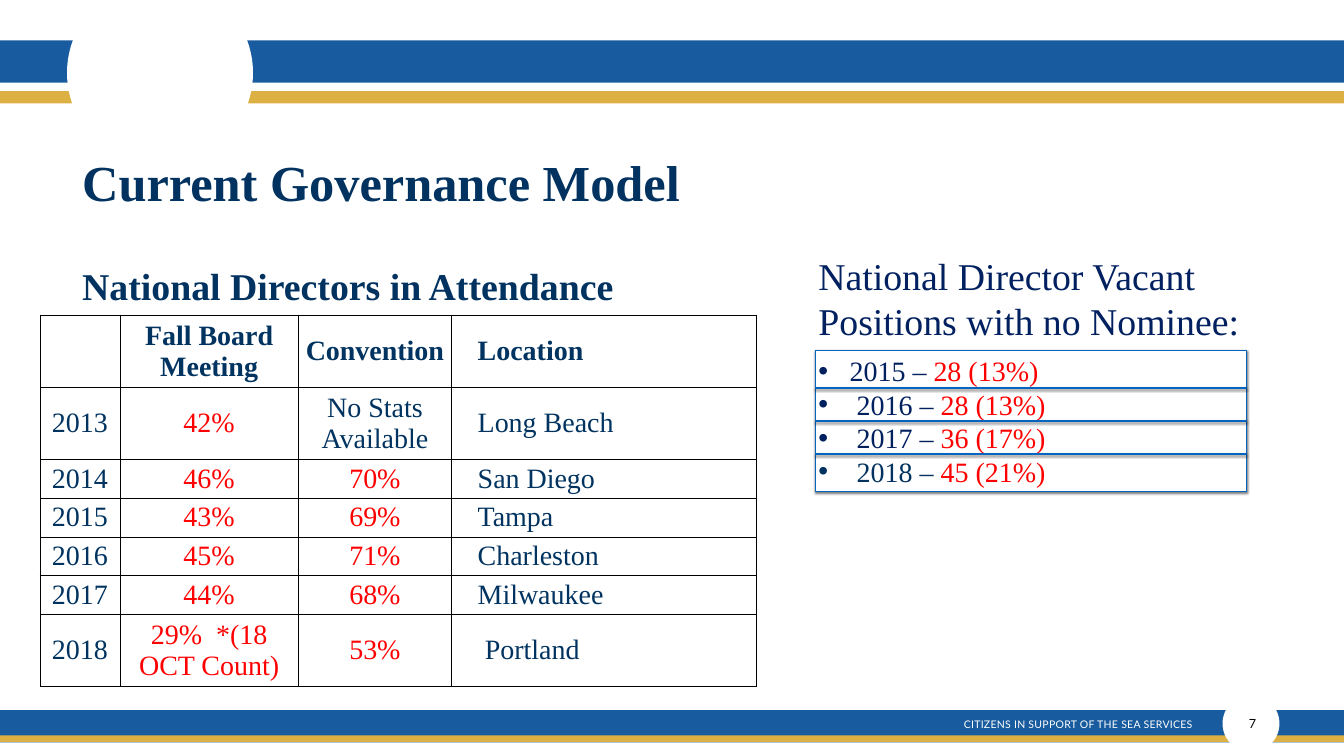
from dataclasses import dataclass

from lxml.etree import SubElement
from pptx import Presentation
from pptx.dml.color import RGBColor as Rgb
from pptx.enum.shapes import MSO_CONNECTOR as Link, MSO_SHAPE as Shape
from pptx.enum.text import MSO_ANCHOR as Anchor, PP_ALIGN as Align
from pptx.oxml import parse_xml
from pptx.oxml.ns import nsdecls, qn
from pptx.util import Inches, Pt


@dataclass(frozen=True)
class Theme:
    blue: str = "185B9E"
    gold: str = "DDB043"
    white: str = "FFFFFF"
    black: str = "000000"
    navy: str = "013260"
    table_navy: str = "013360"
    deep_navy: str = "002060"
    red: str = "FF0000"
    outline: str = "0365C0"
    serif: str = "Times New Roman"
    sans: str = "Lato"
    title: int = 72
    heading: int = 54
    body: int = 40
    number: int = 18
    footer: int = 15


theme = Theme()
SHADOW = (
    f'<a:outerShdw {nsdecls("a")} blurRad="{Pt(3)}" dist="{Pt(2)}" dir="5400000" rotWithShape="0">'
    f'<a:srgbClr val="{theme.black}"><a:alpha val="50000"/></a:srgbClr></a:outerShdw>'
)


def add_span(para, text, size, color, name=theme.serif, bold=False):
    span = para.add_run()
    span.text = text
    for key, value in {"size": Pt(size), "name": name, "bold": bold}.items():
        setattr(span.font, key, value)
    span.font.color.rgb = Rgb.from_string(color)
    return span


def add_text_box(place, inset, **frame_format):
    """Add a wrapping text box with equal insets and return its frame."""
    frame = page.shapes.add_textbox(*map(Inches, place)).text_frame
    settings = {f"margin_{side}": Inches(inset) for side in ("left", "top", "right", "bottom")}
    settings |= {"word_wrap": True, "vertical_anchor": Anchor.MIDDLE} | frame_format
    for key, value in settings.items():
        setattr(frame, key, value)
    return frame


deck = Presentation()
deck.slide_width, deck.slide_height = Inches(26.67), Inches(15)
page = deck.slides.add_slide(deck.slide_layouts[6])

# Header and footer bands with their round cut-outs
for kind, place, color in [
    (Shape.RECTANGLE, (-0.2, 0.8, 27.08, 0.84), theme.blue),
    (Shape.RECTANGLE, (-0.2, 1.81, 27.08, 0.24), theme.gold),
    (Shape.OVAL, (1.33, -0.4, 3.69, 3.69), theme.white),
    (Shape.RECTANGLE, (-0.1, 14.09, 27.08, 0.64), theme.blue),
    (Shape.RECTANGLE, (-0.1, 14.59, 27.08, 0.13), theme.gold),
    (Shape.OVAL, (24.26, 13.79, 1.13, 1.13), theme.white),
]:
    band = page.shapes.add_shape(kind, *map(Inches, place))
    band.shadow.inherit = False
    band.fill.solid()
    band.fill.fore_color.rgb = Rgb.from_string(color)
    band.line.fill.background()

# Footer motto and page number
para = add_text_box((17.34, 14.18, 6.67, 0.35), 0.04, margin_right=Inches(0.34)).paragraphs[0]
para.alignment, para.line_spacing = Align.RIGHT, 1.2
motto = add_span(para, "CITIZENS IN SUPPORT OF THE SEA SERVICES", theme.footer, theme.white, theme.sans)
motto.font._element.set("spc", "40")

para = add_text_box((24.58, 14.15, 0.4, 0.41), 0.05, word_wrap=False).paragraphs[0]
para.alignment = Align.RIGHT
add_span(para, "7", theme.number, theme.black, theme.sans)

# Title and table heading
frame = add_text_box((1.63, 2.99, 22.28, 3.1), 0, vertical_anchor=Anchor.TOP)
add_span(frame.paragraphs[0], "Current Governance Model", theme.title, theme.navy, bold=True)
para = frame.add_paragraph()
para.space_before = Pt(74)
add_span(para, "National Directors in Attendance", theme.heading, theme.navy, bold=True)

# Attendance table
rows = [
    ("", "Fall Board Meeting", "Convention", "Location"),
    ("2013", "42%", "No Stats Available", "Long Beach"),
    ("2014", "46%", "70%", "San Diego"),
    ("2015", "43%", "69%", "Tampa"),
    ("2016", "45%", "71%", "Charleston"),
    ("2017", "44%", "68%", "Milwaukee"),
    ("2018", "29%  *(18 OCT Count)", "53%", "Portland"),
]
column_widths = [1.59, 3.54, 3.04, 6.05]
tall, short = 1.39, 0.74
row_heights = [tall, tall, short, short, short, short, tall]
table = page.shapes.add_table(
    len(rows), len(column_widths), Inches(0.79), Inches(6.25),
    Inches(sum(column_widths)), Inches(sum(row_heights)),
).table
for column, width in zip(table.columns, column_widths):
    column.width = Inches(width)
for row, height in zip(table.rows, row_heights):
    row.height = Inches(height)

for r, values in enumerate(rows):
    for c, text in enumerate(values):
        cell = table.cell(r, c)
        cell.vertical_anchor = Anchor.MIDDLE
        if c == 3:
            cell.margin_left = Inches(0.66 if text == "Portland" else 0.52)
        cell_format = cell._tc.get_or_add_tcPr()
        for side in ("lnL", "lnR", "lnT", "lnB"):
            edge = SubElement(cell_format, qn(f"a:{side}"), w=str(Pt(1)))
            ink = SubElement(edge, qn("a:solidFill"))
            SubElement(ink, qn("a:srgbClr"), val=theme.black)
        cell.fill.background()
        para = cell.text_frame.paragraphs[0]
        para.alignment = Align.LEFT if c == 3 else Align.CENTER
        if text:
            color = theme.red if "%" in text else theme.table_navy
            add_span(para, text, theme.body, color, bold=r == 0)

# Vacant positions
para = add_text_box((16.18, 4.94, 8.8, 1.93), 0.06).paragraphs[0]
add_span(para, "National Director Vacant Positions with no Nominee:", theme.heading, theme.deep_navy)

left, right = 16.18, 24.73
vacancies = page.shapes.add_shape(
    Shape.RECTANGLE, Inches(left), Inches(6.95), Inches(right - left), Inches(2.8)
)
vacancies.fill.solid()
vacancies.fill.fore_color.rgb = Rgb.from_string(theme.white)
vacancies.shadow.inherit = False
vacancies._element.spPr.find(qn("a:effectLst")).append(parse_xml(SHADOW))
frame = vacancies.text_frame
frame.vertical_anchor = Anchor.MIDDLE
for side in ("left", "top", "right", "bottom"):
    setattr(frame, f"margin_{side}", Inches(0.06))

for i, (year, count, color, indent) in enumerate([
    ("2015 – ", "28 (13%)", theme.deep_navy, 0.62),
    ("2016 – ", "28 (13%)", theme.deep_navy, 0.76),
    ("2017 – ", "36 (17%)", theme.deep_navy, 0.76),
    ("2018 – ", "45 (21%)", theme.navy, 0.76),
]):
    para = frame.add_paragraph() if i else frame.paragraphs[0]
    para.alignment = Align.LEFT
    para_format = para._p.get_or_add_pPr()
    para_format.set("marL", str(Inches(indent)))
    para_format.set("indent", str(-Inches(indent)))
    SubElement(para_format, qn("a:buFont"), typeface="Arial")
    SubElement(para_format, qn("a:buChar"), char="•")
    add_span(para, year, theme.body, color)
    add_span(para, count, theme.body, theme.red)

dividers = [
    page.shapes.add_connector(Link.STRAIGHT, Inches(left), Inches(y), Inches(right), Inches(y))
    for y in (7.7, 8.35, 9.01)
]
dividers[1].begin_connect(vacancies, 1)
dividers[1].end_connect(vacancies, 3)
for outlined in [vacancies, *dividers]:
    outlined.line.color.rgb = Rgb.from_string(theme.outline)
    outlined.line.width = Pt(2)
for divider in dividers:
    SubElement(divider._element.spPr, qn("a:effectLst")).append(parse_xml(SHADOW))

deck.save("out.pptx")
